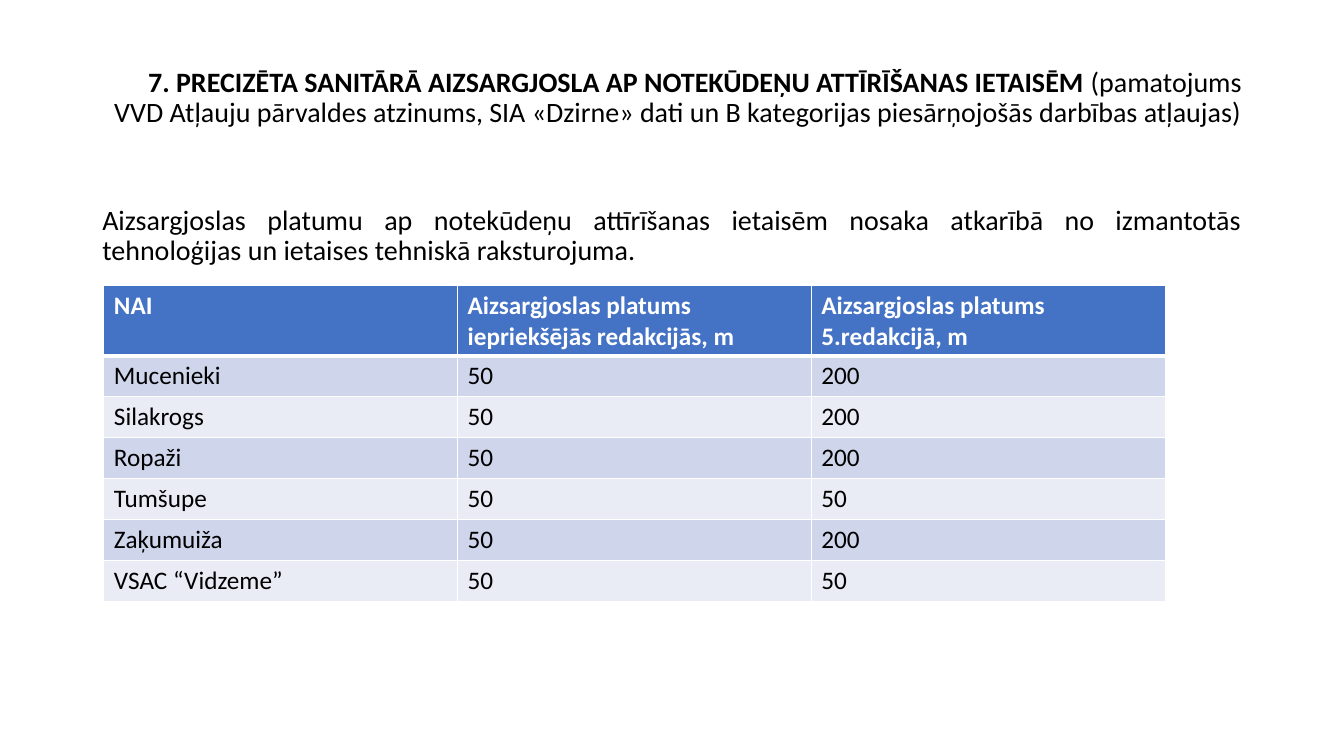
from dataclasses import dataclass

from lxml import etree
from pptx import Presentation
from pptx.dml.color import RGBColor
from pptx.enum.text import MSO_ANCHOR, PP_ALIGN
from pptx.oxml.ns import qn
from pptx.slide import Slide
from pptx.table import _Cell
from pptx.text.text import _Paragraph
from pptx.util import Pt

TOP, MIDDLE = MSO_ANCHOR.TOP, MSO_ANCHOR.MIDDLE
LEFT, RIGHT, JUSTIFY = PP_ALIGN.LEFT, PP_ALIGN.RIGHT, PP_ALIGN.JUSTIFY

BLACK = RGBColor(0x00, 0x00, 0x00)
WHITE = RGBColor(0xFF, 0xFF, 0xFF)
HEADER_BLUE = RGBColor(0x44, 0x72, 0xC4)
BANDS = (RGBColor(0xCF, 0xD5, 0xEA), RGBColor(0xE9, 0xEB, 0xF5))

FONT = "Calibri"
TEXT_SIZE, TABLE_SIZE = 20, 18
TABLE_LEFT, TABLE_TOP = 74.2, 203.8
COLUMN_WIDTH, HEADER_HEIGHT, ROW_HEIGHT = 252.7, 50.2, 29.2
THIN, THICK = 1, 3


@dataclass
class Run:
    text: str
    bold: bool = False


@dataclass
class TextBlock:
    top: float
    height: float
    anchor: MSO_ANCHOR
    align: PP_ALIGN
    runs: list[Run]
    bottom_margin: float = 3.6


BLOCKS = [
    TextBlock(28.8, 104.4, MIDDLE, RIGHT, [
        Run("7. PRECIZĒTA SANITĀRĀ AIZSARGJOSLA AP NOTEKŪDEŅU ATTĪRĪŠANAS IETAISĒM ", True),
        Run("(pamatojums VVD Atļauju pārvaldes atzinums, SIA «Dzirne» dati un "
            "B kategorijas piesārņojošās darbības atļaujas)"),
    ], bottom_margin=25.2),
    TextBlock(144, 342.7, TOP, JUSTIFY, [
        Run("Aizsargjoslas platumu ap notekūdeņu attīrīšanas ietaisēm nosaka atkarībā no "
            "izmantotās tehnoloģijas un ietaises tehniskā raksturojuma."),
    ]),
]

ROWS = [
    ("NAI", "Aizsargjoslas platums iepriekšējās redakcijās, m",
     "Aizsargjoslas platums 5.redakcijā, m"),
    ("Mucenieki", "50", "200"),
    ("Silakrogs", "50", "200"),
    ("Ropaži", "50", "200"),
    ("Tumšupe", "50", "50"),
    ("Zaķumuiža", "50", "200"),
    ("VSAC “Vidzeme”", "50", "50"),
]


def add_run(p: _Paragraph, run: Run, size: float, color: RGBColor) -> None:
    r = p.add_run()
    r.text = run.text
    r.font.name = FONT
    r.font.size = Pt(size)
    r.font.bold = run.bold
    r.font.color.rgb = color


def add_text_block(s: Slide, block: TextBlock) -> None:
    sp = s.shapes.add_textbox(Pt(66), Pt(block.top), Pt(828), Pt(block.height))
    tf = sp.text_frame
    tf.word_wrap = True
    tf.vertical_anchor = block.anchor
    tf.margin_bottom = Pt(block.bottom_margin)
    p = tf.paragraphs[0]
    p.alignment = block.align
    p.line_spacing = 0.9
    for run in block.runs:
        add_run(p, run, TEXT_SIZE, BLACK)


def set_borders(cell: _Cell, top: float, bottom: float) -> None:
    """Draw white borders, placed before the fill as the schema requires."""
    tc_pr = cell._tc.get_or_add_tcPr()
    widths = {"a:lnL": THIN, "a:lnR": THIN, "a:lnT": top, "a:lnB": bottom}
    for i, (tag, width) in enumerate(widths.items()):
        ln = etree.Element(qn(tag), w=str(Pt(width)))
        fill = etree.SubElement(ln, qn("a:solidFill"))
        etree.SubElement(fill, qn("a:srgbClr"), val=str(WHITE))
        tc_pr.insert(i, ln)


def add_width_table(s: Slide) -> None:
    columns = len(ROWS[0])
    height = HEADER_HEIGHT + ROW_HEIGHT * (len(ROWS) - 1)
    table = s.shapes.add_table(len(ROWS), columns, Pt(TABLE_LEFT), Pt(TABLE_TOP),
                               Pt(COLUMN_WIDTH * columns), Pt(height)).table
    for column in table.columns:
        column.width = Pt(COLUMN_WIDTH)
    for i, row in enumerate(ROWS):
        header = i == 0
        table.rows[i].height = Pt(HEADER_HEIGHT if header else ROW_HEIGHT)
        for j, text in enumerate(row):
            cell = table.cell(i, j)
            cell.fill.solid()
            cell.fill.fore_color.rgb = HEADER_BLUE if header else BANDS[(i - 1) % 2]
            set_borders(cell, THICK if i == 1 else THIN, THICK if header else THIN)
            p = cell.text_frame.paragraphs[0]
            p.alignment = LEFT
            add_run(p, Run(text, header), TABLE_SIZE, WHITE if header else BLACK)


def main() -> None:
    prs = Presentation()
    prs.slide_width, prs.slide_height = Pt(960), Pt(540)
    s = prs.slides.add_slide(prs.slide_layouts[6])
    for block in BLOCKS:
        add_text_block(s, block)
    add_width_table(s)
    prs.save("out.pptx")


if __name__ == "__main__":
    main()
